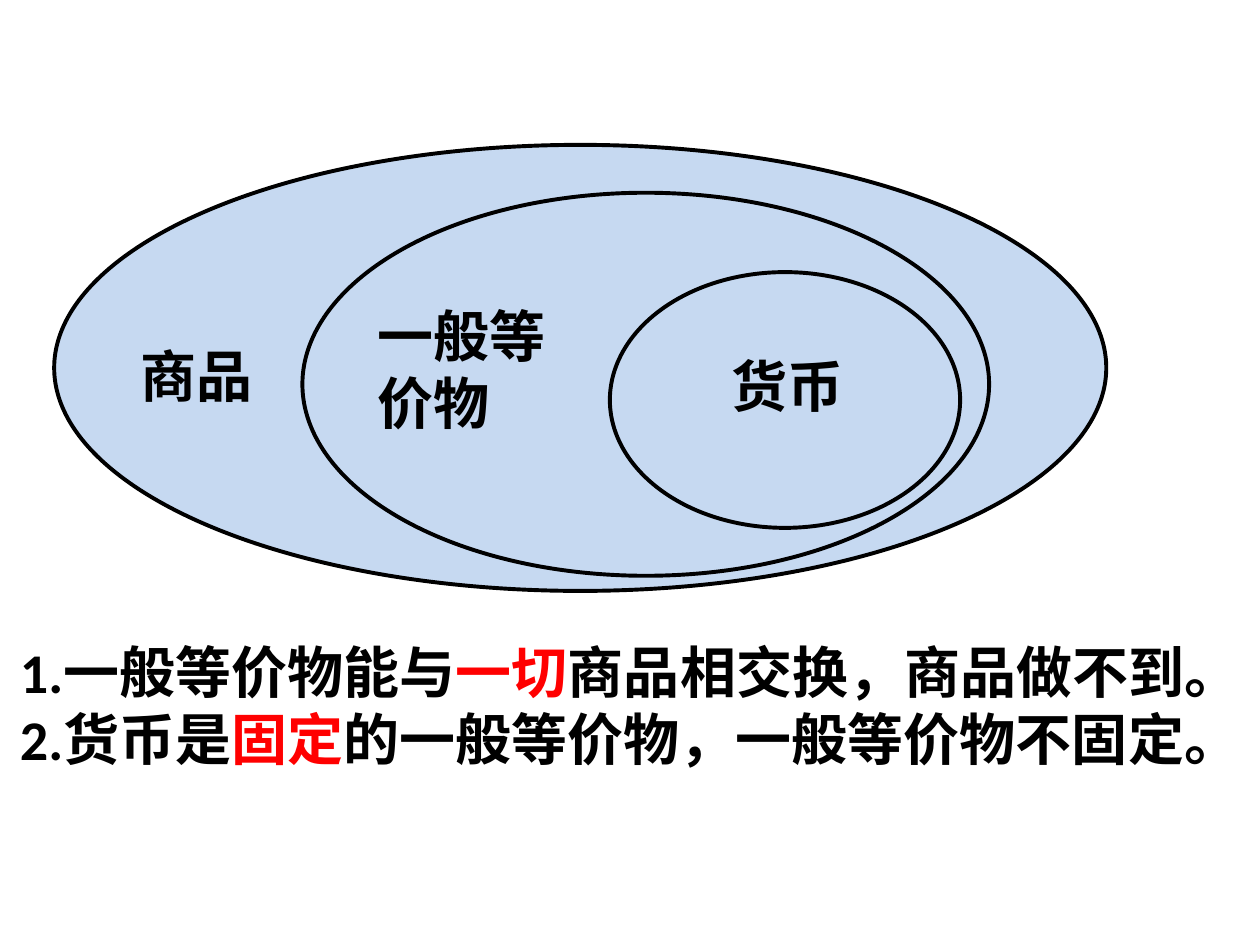
from pptx import Presentation
from pptx import util as u
from pptx.dml.color import RGBColor
from pptx.enum import shapes, text

BLACK = RGBColor(0x00, 0x00, 0x00)
RED = RGBColor(0xFF, 0x00, 0x00)
PALE_BLUE = RGBColor(0xC6, 0xD9, 0xF1)


class Diagram:
    """Holds the style and the current slide."""

    font = {"name": "Calibri", "size": u.Pt(32), "bold": True}

    def __init__(self, page):
        self.page = page

    def ovals(self, frames):
        group = self.page.shapes.add_group_shape()
        for frame in frames:
            oval = group.shapes.add_shape(
                shapes.MSO_SHAPE.OVAL, *map(u.Inches, frame))
            oval.shadow.inherit = False
            oval.fill.solid()
            oval.fill.fore_color.rgb = PALE_BLUE
            oval.line.color.rgb = BLACK
            oval.line.width = u.Pt(2.25)

    def label(self, frame, lines, wrap=False):
        """Each line is a list of spans; every second span is highlighted."""
        box = self.page.shapes.add_textbox(*map(u.Inches, frame))
        frame_format = {"word_wrap": wrap,
                        "auto_size": text.MSO_AUTO_SIZE.SHAPE_TO_FIT_TEXT}
        for name, value in frame_format.items():
            setattr(box.text_frame, name, value)
        for row, spans in enumerate(lines):
            para = (box.text_frame.add_paragraph() if row
                    else box.text_frame.paragraphs[0])
            for index, words in enumerate(spans):
                span = para.add_run()
                span.text = words
                for name, value in self.font.items():
                    setattr(span.font, name, value)
                span.font.color.rgb = RED if index % 2 else BLACK


def main():
    deck = Presentation()
    deck.slide_width, deck.slide_height = u.Inches(10), u.Inches(7.5)
    diagram = Diagram(deck.slides.add_slide(deck.slide_layouts[6]))

    # Nested sets, from the widest to the narrowest
    diagram.ovals([(0.43, 1.15, 8.35, 3.54),
                   (2.4, 1.53, 5.45, 3.04),
                   (4.84, 2.16, 2.78, 2.03)])

    # Names of the sets
    diagram.label((5.71, 2.74, 1.09, 0.63), [["货币"]])
    diagram.label((2.9, 2.34, 1.73, 1.17), [["一般等价物"]], wrap=True)
    diagram.label((1.02, 2.66, 1.09, 0.63), [["商品"]])

    # Explanation below
    diagram.label((0.06, 5.01, 10.01, 2.26), [
        ["1.一般等价物能与", "一切", "商品相交换，商品做不到。"],
        ["2.货币是", "固定", "的一般等价物，一般等价物不固定。"],
    ])

    deck.save("out.pptx")


if __name__ == "__main__":
    main()
